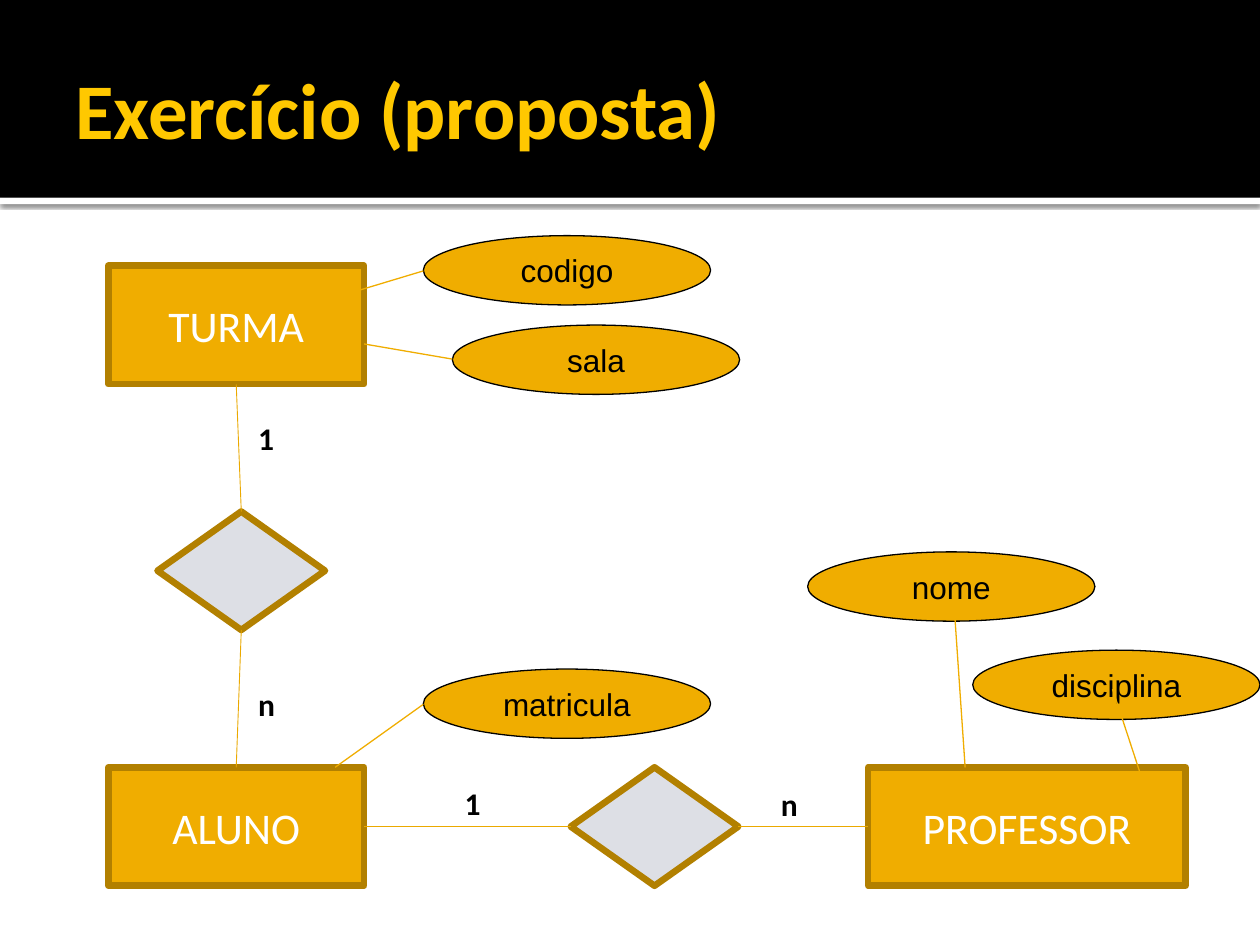
"""Build an entity-relationship diagram slide for a school exercise."""
from lxml import etree
from pptx import Presentation
from pptx.dml.color import RGBColor
from pptx.enum.shapes import MSO_CONNECTOR, MSO_SHAPE
from pptx.enum.text import MSO_ANCHOR, MSO_AUTO_SIZE, PP_ALIGN
from pptx.oxml.ns import qn
from pptx.util import Inches, Pt

RECTANGLE, DIAMOND, ELLIPSE = MSO_SHAPE.RECTANGLE, MSO_SHAPE.DIAMOND, MSO_SHAPE.OVAL
STRAIGHT = MSO_CONNECTOR.STRAIGHT
MIDDLE, CENTER, LEFT = MSO_ANCHOR.MIDDLE, PP_ALIGN.CENTER, PP_ALIGN.LEFT
NO_FIT, GROW = MSO_AUTO_SIZE.NONE, MSO_AUTO_SIZE.SHAPE_TO_FIT_TEXT
TOP_SIDE, LEFT_SIDE, BOTTOM_SIDE, RIGHT_SIDE = range(4)

COLORS = {
    "black": "000000", "white": "FFFFFF", "title": "FFC800", "gold": "F0AD00",
    "border": "B28000", "diamond": "DDDFE5", "relation_line": "EBA900",
}
TITLE_FONT = {"name": "Calibri", "size": Pt(45), "bold": True}
ENTITY_FONT = {"name": "Calibri", "size": Pt(25), "bold": False}
LABEL_FONT = {"name": "Calibri", "size": Pt(18), "bold": True}
ATTRIBUTE_FONT = {"name": "Arial", "size": Pt(18), "bold": False}

BOX_HEIGHT = 0.94
ENTITIES = {
    "TURMA": (0.86, 2.11, 2.03),
    "ALUNO": (0.86, 6.09, 2.03),
    "PROFESSOR": (6.89, 6.09, 2.52),
}
DIAMONDS = {"turma_aluno": (1.25, 4.06), "aluno_professor": (4.53, 6.09)}
RELATION_LINES = [
    ("TURMA", BOTTOM_SIDE, "turma_aluno", TOP_SIDE),
    ("turma_aluno", BOTTOM_SIDE, "ALUNO", TOP_SIDE),
    ("ALUNO", RIGHT_SIDE, "aluno_professor", LEFT_SIDE),
    ("aluno_professor", RIGHT_SIDE, "PROFESSOR", LEFT_SIDE),
]
CARDINALITIES = [("1", 1.95, 3.28), ("n", 1.95, 5.39), ("1", 3.59, 6.17), ("n", 6.1, 6.18)]
ATTRIBUTES = [
    ("codigo", (3.36, 1.87), (3.36, 2.15), (2.73, 2.34)),
    ("sala", (3.59, 2.58), (3.59, 2.85), (2.89, 2.73)),
    ("nome", (6.41, 4.38), (7.58, 4.92), (7.66, 6.09)),
    ("disciplina", (7.72, 5.16), (8.83, 5.47), (9.06, 6.17)),
    ("matricula", (3.36, 5.31), (3.36, 5.59), (2.66, 6.09)),
]


def color(name):
    return RGBColor.from_string(COLORS[name])


def write_text(shape, text, font, font_color, alignment):
    paragraph = shape.text_frame.paragraphs[0]
    paragraph.text = text
    paragraph.alignment = alignment
    for attribute, value in font.items():
        setattr(paragraph.font, attribute, value)
    paragraph.font.color.rgb = color(font_color)


def add_box(slide, preset, bounds, fill, border=None, width=0):
    shape = slide.shapes.add_shape(preset, *map(Inches, bounds))
    shape.shadow.inherit = False
    shape.fill.solid()
    shape.fill.fore_color.rgb = color(fill)
    if border:
        shape.line.color.rgb = color(border)
        shape.line.width = Pt(width)
    else:
        shape.line.fill.background()
    shape.text_frame.vertical_anchor = MIDDLE
    return shape


def add_line(slide, start, end, line_color, width):
    connector = slide.shapes.add_connector(STRAIGHT, *map(Inches, (*start, *end)))
    connector.line.color.rgb = color(line_color)
    connector.line.width = Pt(width)
    etree.SubElement(connector._element.spPr, qn("a:effectLst"))
    return connector


def add_band_shadow(shape):
    effects = shape._element.spPr.find(qn("a:effectLst"))
    shadow = etree.SubElement(
        effects, qn("a:outerShdw"), blurRad=str(Pt(2.5)), dist=str(Pt(0.8)),
        dir="5400000", algn="tl", rotWithShape="0")
    shade = etree.SubElement(shadow, qn("a:srgbClr"), val=COLORS["black"])
    etree.SubElement(shade, qn("a:alpha"), val="60000")


def add_header(slide, text):
    add_band_shadow(add_box(slide, RECTANGLE, (0, 1.57, 10, 0.05), "white"))
    add_box(slide, RECTANGLE, (0, 0, 10, 1.57), "black")
    title = slide.shapes.title
    slide.shapes.element.append(title.element)
    title.left, title.top, title.width, title.height = map(Inches, (0.5, 0.17, 9, 1.37))
    frame_format = {
        "vertical_anchor": MIDDLE, "auto_size": NO_FIT, "margin_left": Inches(0.1),
        "margin_right": Inches(0.05), "margin_top": Inches(0.05),
        "margin_bottom": Inches(0.05),
    }
    for attribute, value in frame_format.items():
        setattr(title.text_frame, attribute, value)
    write_text(title, text, TITLE_FONT, "title", LEFT)


def add_entity(slide, name, left, top, width):
    bounds = (left, top, width, BOX_HEIGHT)
    shape = add_box(slide, RECTANGLE, bounds, "gold", "border", 3.78)
    write_text(shape, name, ENTITY_FONT, "white", CENTER)
    return shape


def add_diamond(slide, left, top):
    return add_box(slide, DIAMOND, (left, top, 1.33, BOX_HEIGHT), "diamond", "border", 3.78)


def add_relation_line(slide, begin, begin_side, end, end_side):
    connector = add_line(slide, (0, 0), (1, 1), "relation_line", 0.5)
    connector.begin_connect(begin, begin_side)
    connector.end_connect(end, end_side)


def add_cardinality(slide, text, left, top):
    box = slide.shapes.add_textbox(*map(Inches, (left, top, 0.34, 0.4)))
    box.text_frame.word_wrap = False
    box.text_frame.auto_size = GROW
    write_text(box, text, LABEL_FONT, "black", LEFT)


def add_attribute(slide, name, position, start, end):
    ellipse = add_box(slide, ELLIPSE, (*position, 2.28, 0.55), "gold", "black", 0.75)
    ellipse.text_frame.word_wrap = False
    write_text(ellipse, name, ATTRIBUTE_FONT, "black", CENTER)
    add_line(slide, start, end, "gold", 0.75)


def main():
    presentation = Presentation()
    presentation.slide_width, presentation.slide_height = Inches(10), Inches(7.5)
    slide = presentation.slides.add_slide(presentation.slide_layouts[5])
    add_header(slide, "Exercício (proposta)")
    nodes = {name: add_entity(slide, name, *place) for name, place in ENTITIES.items()}
    for name, place in DIAMONDS.items():
        nodes[name] = add_diamond(slide, *place)
    for begin, begin_side, end, end_side in RELATION_LINES:
        add_relation_line(slide, nodes[begin], begin_side, nodes[end], end_side)
    for cardinality in CARDINALITIES:
        add_cardinality(slide, *cardinality)
    for attribute in ATTRIBUTES:
        add_attribute(slide, *attribute)
    presentation.save("out.pptx")


if __name__ == "__main__":
    main()
